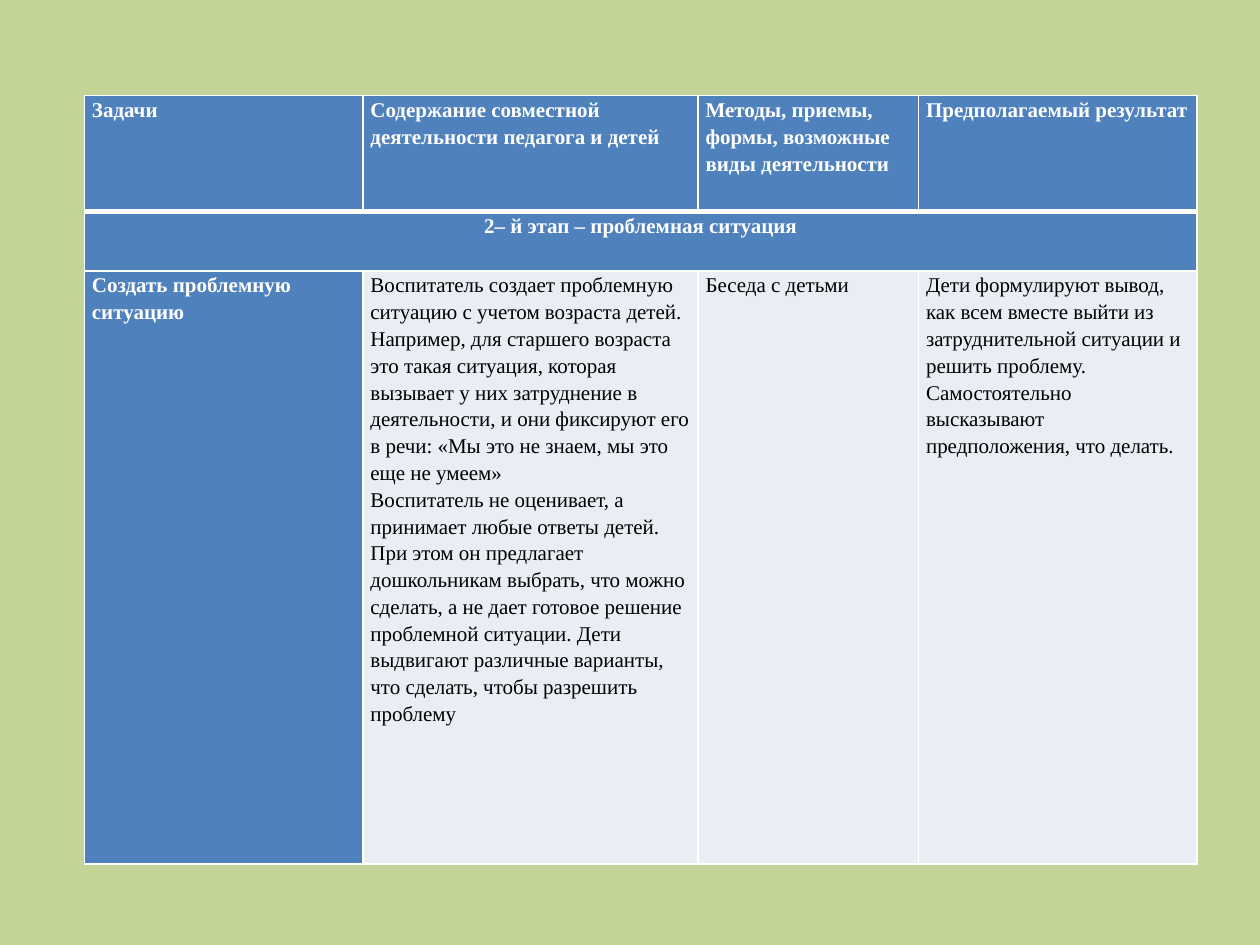
from lxml import etree
from pptx import Presentation
from pptx.dml.color import RGBColor
from pptx.enum.text import PP_ALIGN
from pptx.oxml.ns import qn
from pptx.util import Inches, Pt

CENTER, LEFT = PP_ALIGN.CENTER, PP_ALIGN.LEFT
WHITE = RGBColor(0xFF, 0xFF, 0xFF)
BLACK = RGBColor(0, 0, 0)
BLUE = RGBColor(0x4F, 0x81, 0xBD)
PALE = RGBColor(0xE9, 0xED, 0xF4)
GREEN = RGBColor(0xC1, 0xD5, 0x98)

# Content: rows of cells, with a line break between paragraphs
ROWS = [
    ["Задачи",
     "Содержание совместной деятельности педагога и детей",
     "Методы, приемы, формы, возможные виды деятельности",
     "Предполагаемый результат"],
    ["2– й этап – проблемная ситуация"],
    ["Создать проблемную ситуацию",
     "Воспитатель создает проблемную ситуацию с учетом возраста детей.\n"
     "Например, для старшего возраста это такая ситуация, которая вызывает "
     "у них затруднение в деятельности, и они фиксируют его в речи: "
     "«Мы это не знаем, мы это еще не умеем»\n"
     "Воспитатель не оценивает, а принимает любые ответы детей. При этом он "
     "предлагает дошкольникам выбрать, что можно сделать, а не дает готовое "
     "решение проблемной ситуации. Дети выдвигают различные варианты, "
     "что сделать, чтобы разрешить проблему",
     "Беседа с детьми",
     "Дети формулируют вывод, как всем вместе выйти из затруднительной "
     "ситуации и решить проблему. Самостоятельно высказывают предположения, "
     "что делать."],
]
STAGE_ROW = 1
COLUMN_WIDTHS = [2.21, 2.66, 1.75, 2.21]
ROW_HEIGHTS = [0.92, 0.47, 4.71]
TABLE_LEFT, TABLE_TOP = 0.67, 0.76


def set_borders(cell, widths):
    """Draw white borders; widths maps each side to points."""
    properties = cell._tc.get_or_add_tcPr()
    for side, width in widths.items():
        line = etree.SubElement(properties, qn(f"a:ln{side}"), w=str(Pt(width)))
        fill = etree.SubElement(line, qn("a:solidFill"))
        etree.SubElement(fill, qn("a:srgbClr"), val=str(WHITE))


def fill_cell(cell, text, heading, align):
    cell.margin_left = cell.margin_right = Inches(0.06)
    cell.margin_top = cell.margin_bottom = 0
    cell.fill.solid()
    cell.fill.fore_color.rgb = BLUE if heading else PALE
    cell.text_frame.text = text
    for para in cell.text_frame.paragraphs:
        para.alignment = align
        para.line_spacing = 1.15
        para.font.name = "Times New Roman"
        para.font.size = Pt(12)
        para.font.bold = heading
        para.font.color.rgb = WHITE if heading else BLACK


# Slide and background
deck = Presentation()
deck.slide_width, deck.slide_height = Inches(10), Inches(7.5)
page = deck.slides.add_slide(deck.slide_layouts[6])
page.background.fill.solid()
page.background.fill.fore_color.rgb = GREEN

# Table grid
table = page.shapes.add_table(
    len(ROW_HEIGHTS), len(COLUMN_WIDTHS), Inches(TABLE_LEFT), Inches(TABLE_TOP),
    Inches(sum(COLUMN_WIDTHS)), Inches(sum(ROW_HEIGHTS))).table
table.first_col = True
for column, width in zip(table.columns, COLUMN_WIDTHS):
    column.width = Inches(width)
for row, height in zip(table.rows, ROW_HEIGHTS):
    row.height = Inches(height)

# Borders: a thick rule divides the header from the stage row
for r in range(len(ROW_HEIGHTS)):
    for c in range(len(COLUMN_WIDTHS)):
        set_borders(table.cell(r, c), {
            "L": 1, "R": 1,
            "T": 3 if r == STAGE_ROW else 1,
            "B": 3 if r == STAGE_ROW - 1 else 1})
table.cell(STAGE_ROW, 0).merge(table.cell(STAGE_ROW, len(COLUMN_WIDTHS) - 1))

# Cell text
for r, texts in enumerate(ROWS):
    for c, text in enumerate(texts):
        fill_cell(table.cell(r, c), text, heading=r <= STAGE_ROW or c == 0,
                  align=CENTER if r == STAGE_ROW else LEFT)

deck.save("out.pptx")
